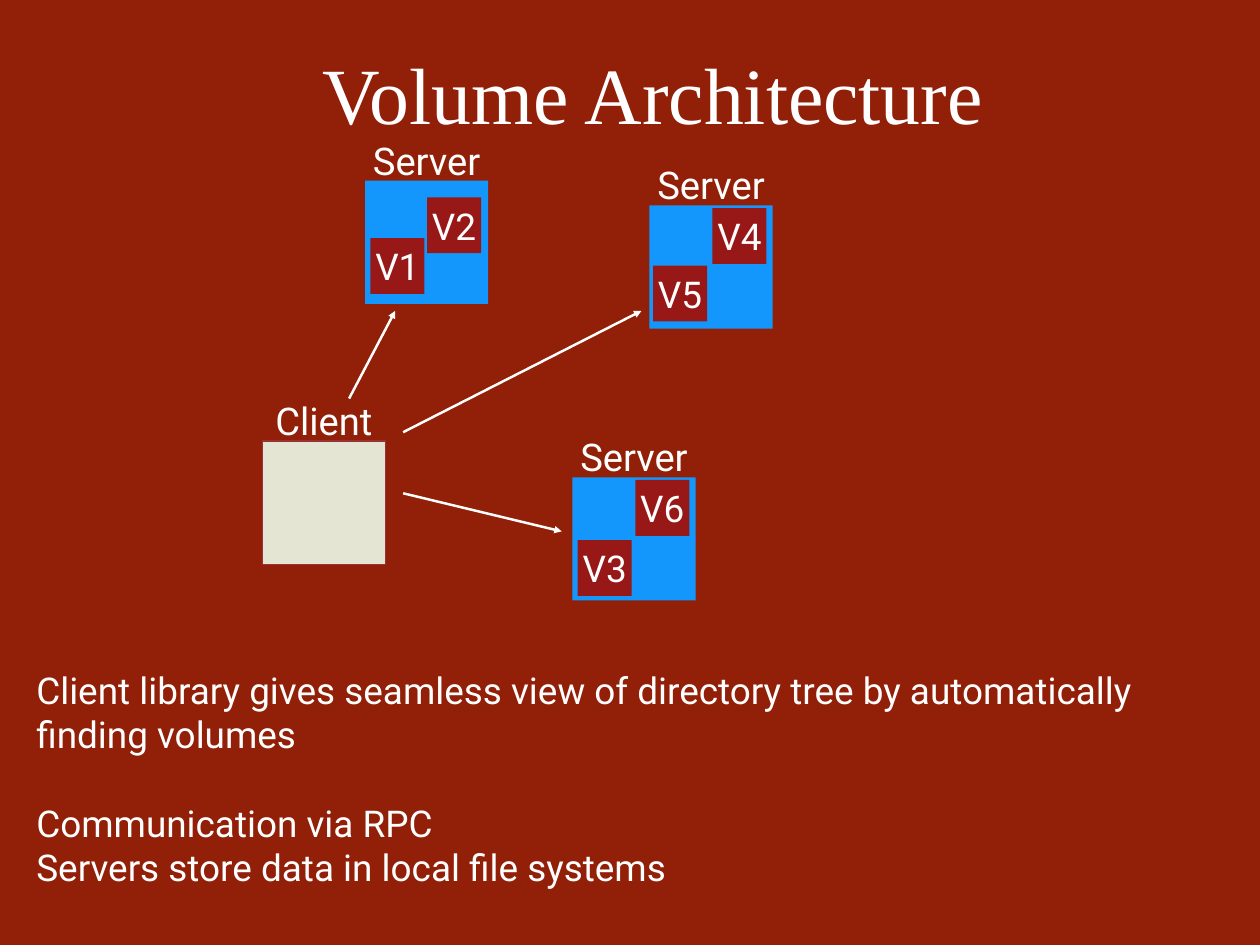
import pptx
import pptx.util
import pptx.dml.color
import pptx.enum.shapes
import pptx.enum.text
import pptx.oxml
import pptx.oxml.ns
from lxml import etree

Inches = pptx.util.Inches
Pt = pptx.util.Pt
RGBColor = pptx.dml.color.RGBColor
Anchor = pptx.enum.text.MSO_ANCHOR
Align = pptx.enum.text.PP_ALIGN

BACKGROUND = RGBColor(0x92, 0x1F, 0x07)
WHITE = RGBColor(0xFF, 0xFF, 0xFF)
CLIENT_FILL = RGBColor(0xE5, 0xE5, 0xD3)
CLIENT_EDGE = RGBColor(0x99, 0x32, 0x32)
SERVER_FILL = RGBColor(0x14, 0x97, 0xFC)
VOLUME_FILL = RGBColor(0x97, 0x18, 0x17)

TITLE = "Volume Architecture"
CLIENT = ("Client", 2.96, 4.98)
SERVERS = [
    ("Server", 4.12, 2.04, [("V1", 4.18, 2.69), ("V2", 4.82, 2.23)]),
    ("Server", 7.33, 2.32, [("V5", 7.37, 3.0), ("V4", 8.04, 2.35)]),
    ("Server", 6.46, 5.39, [("V3", 6.52, 6.1), ("V6", 7.17, 5.42)]),
]
ARROWS = [
    (3.94, 4.5, 4.46, 3.51),
    (4.55, 4.88, 7.24, 3.51),
    (4.55, 5.57, 6.34, 6.0),
]
NOTES = [
    (7.54, 13.47, ["Client library gives seamless view of directory tree "
                   "by automatically finding volumes"]),
    (9.04, 10.52, ["Communication via RPC",
                   "Servers store data in local file systems"]),
]

NOTE_LEFT, NOTE_HEIGHT = 0.41, 1.01
MACHINE_SIDE = 1.39
LABEL_WIDTH, LABEL_HEIGHT, LABEL_RISE = 1.37, 0.63, 0.55
VOLUME_WIDTH, VOLUME_HEIGHT = 0.61, 0.63


def write(box, lines, size=30, font="Roboto", align=Align.CENTER,
          anchor=Anchor.MIDDLE, wrap=True, margins=(0, 0)):
    frame = box.text_frame
    frame.auto_size = pptx.enum.text.MSO_AUTO_SIZE.NONE
    frame.word_wrap = wrap
    frame.vertical_anchor = anchor
    frame.margin_left = frame.margin_right = Inches(margins[0])
    frame.margin_top = frame.margin_bottom = Inches(margins[1])
    for index, line in enumerate(lines):
        para = frame.paragraphs[0] if index == 0 else frame.add_paragraph()
        para.alignment = align
        para.space_before = Pt(0)
        span = para.add_run()
        span.text = line
        span.font.size = Pt(size)
        span.font.name = font
        span.font.color.rgb = WHITE


def place(box, left, top, width, height):
    box.left, box.top = Inches(left), Inches(top)
    box.width, box.height = Inches(width), Inches(height)


def remove_bullets(box):
    for para in box.text_frame.paragraphs:
        properties = para._p.get_or_add_pPr()
        properties.set("marL", "0")
        properties.set("indent", "0")
        etree.SubElement(properties, pptx.oxml.ns.qn("a:buNone"))


def add_square(page, left, top, width, height, fill, edge=None):
    square = page.shapes.add_shape(
        pptx.enum.shapes.MSO_SHAPE.RECTANGLE,
        Inches(left), Inches(top), Inches(width), Inches(height))
    square.shadow.inherit = False
    square.fill.solid()
    square.fill.fore_color.rgb = fill
    if edge is None:
        square.line.fill.background()
    else:
        square.line.color.rgb = edge
        square.line.width = Pt(1)
    return square


def add_machine(page, name, left, top, fill, edge=None):
    add_square(page, left, top, MACHINE_SIDE, MACHINE_SIDE, fill, edge)
    label = page.shapes.add_textbox(
        Inches(left + (MACHINE_SIDE - LABEL_WIDTH) / 2), Inches(top - LABEL_RISE),
        Inches(LABEL_WIDTH), Inches(LABEL_HEIGHT))
    write(label, [name], size=31, wrap=False, margins=(0.06, 0.06))


def add_arrow(page, start_x, start_y, end_x, end_y):
    arrow = page.shapes.add_connector(
        pptx.enum.shapes.MSO_CONNECTOR.STRAIGHT,
        Inches(start_x), Inches(start_y), Inches(end_x), Inches(end_y))
    arrow.line.color.rgb = WHITE
    arrow.line.width = Pt(2)
    head = etree.SubElement(arrow.line._get_or_add_ln(), pptx.oxml.ns.qn("a:tailEnd"))
    head.set("type", "triangle")
    etree.SubElement(arrow._element.spPr, pptx.oxml.ns.qn("a:effectLst"))


def main():
    deck = pptx.Presentation()
    deck.slide_width, deck.slide_height = Inches(14.22), Inches(10.67)
    page = deck.slides.add_slide(deck.slide_layouts.get_by_name("Two Content"))
    page.background.fill.solid()
    page.background.fill.fore_color.rgb = BACKGROUND

    title, *bodies = page.placeholders
    place(title, 1.47, 0.05, 11.8, 2)
    write(title, [TITLE], size=64.8, font="Times New Roman", margins=(0.14, 0.07))
    for body, (top, width, lines) in zip(bodies, NOTES):
        place(body, NOTE_LEFT, top, width, NOTE_HEIGHT)
        write(body, lines, align=Align.LEFT, anchor=Anchor.TOP)
        remove_bullets(body)

    add_machine(page, *CLIENT, CLIENT_FILL, CLIENT_EDGE)
    for name, left, top, volumes in SERVERS:
        add_machine(page, name, left, top, SERVER_FILL)
        for volume, volume_left, volume_top in volumes:
            square = add_square(page, volume_left, volume_top,
                                VOLUME_WIDTH, VOLUME_HEIGHT, VOLUME_FILL)
            write(square, [volume])
    for arrow in ARROWS:
        add_arrow(page, *arrow)

    deck.save("out.pptx")


if __name__ == "__main__":
    main()
